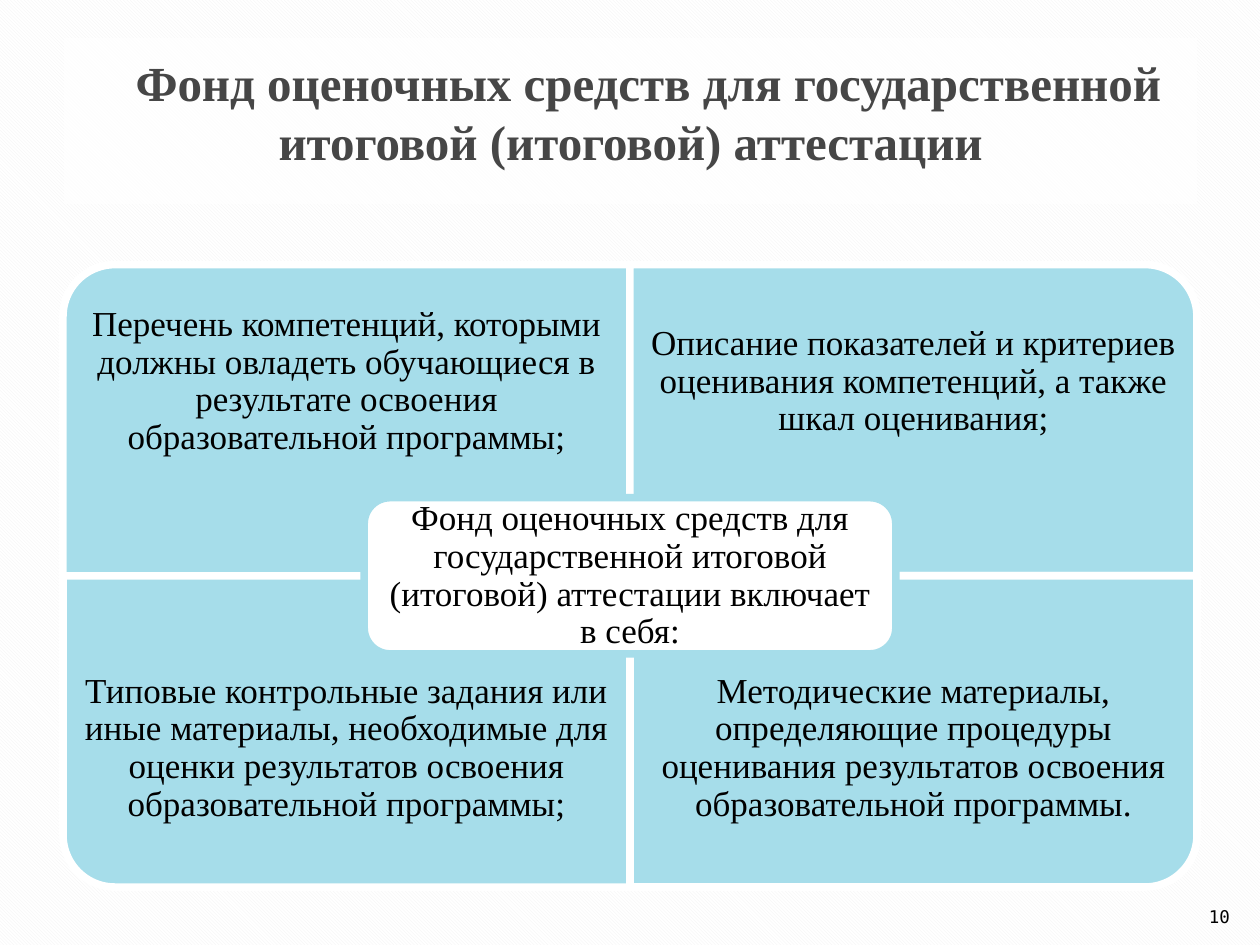
"""Build a slide on the assessment fund: four quadrants around a central label."""
import pptx
import pptx.dml.color
import pptx.enum.dml
import pptx.enum.shapes
import pptx.enum.text
import pptx.oxml
import pptx.oxml.ns
import pptx.util

Inches, Pt = pptx.util.Inches, pptx.util.Pt
RGBColor = pptx.dml.color.RGBColor
SHAPE = pptx.enum.shapes.MSO_SHAPE
ANCHOR = pptx.enum.text.MSO_ANCHOR
ALIGN = pptx.enum.text.PP_ALIGN

TITLE = "Фонд оценочных средств для государственной итоговой (итоговой) аттестации"
CENTER = "Фонд оценочных средств для государственной итоговой (итоговой) аттестации включает в себя:"
QUADRANTS = [
    ("Перечень компетенций, которыми должны овладеть обучающиеся в результате "
     "освоения образовательной программы;", 270),
    ("Описание показателей и критериев оценивания компетенций, а также шкал оценивания;", 0),
    ("Типовые контрольные задания или иные материалы, необходимые для оценки "
     "результатов освоения образовательной программы;", 180),
    ("Методические материалы, определяющие процедуры оценивания результатов "
     "освоения образовательной программы.", 90),
]
PAGE = "10"

WHITE = RGBColor(0xFF, 0xFF, 0xFF)
BLACK = RGBColor(0, 0, 0)
GRAY = RGBColor(0x46, 0x46, 0x46)
PALE = RGBColor(0xF2, 0xF2, 0xF2)
BLUE = RGBColor(0xA6, 0xDD, 0xEA)

LEFT, TOP, QUAD_W, QUAD_H = 0.5, 2.1, 4.5, 2.47
TEXT_H = 1.86
TITLE_FONT = {"name": "Times New Roman", "size": Pt(28), "bold": True}
BODY_FONT = {"name": "Times New Roman", "size": Pt(20)}
PAGE_FONT = {"name": "DejaVu Sans Mono", "size": Pt(10)}


def write(s, text, font, color=BLACK, anchor=ANCHOR.MIDDLE, align=ALIGN.CENTER,
          spacing=None, margin=None):
    tf = s.text_frame
    tf.word_wrap = True
    tf.vertical_anchor = anchor
    if margin is not None:
        for side in ("left", "top", "right", "bottom"):
            setattr(tf, f"margin_{side}", Inches(margin))
    p = tf.paragraphs[0]
    p.alignment = align
    p.line_spacing = spacing
    r = p.add_run()
    r.text = text
    for key, value in font.items():
        setattr(r.font, key, value)
    r.font.color.rgb = color
    return p


def add_block(sp, kind, x, y, w, h, fill, line):
    s = sp.add_shape(kind, Inches(x), Inches(y), Inches(w), Inches(h))
    s.shadow.inherit = False
    s.fill.solid()
    s.fill.fore_color.rgb = fill
    s.line.color.rgb = line
    s.line.width = Pt(4.33)
    return s


def add_title(s):
    s.left, s.top, s.width, s.height = map(Inches, (0.51, 0.3, 8.99, 1.32))
    s.fill.solid()
    s.fill.fore_color.rgb = WHITE
    color = s.fill._xPr.find(".//" + pptx.oxml.ns.qn("a:srgbClr"))
    color.append(pptx.oxml.parse_xml(
        f'<a:alpha {pptx.oxml.ns.nsdecls("a")} val="72000"/>'))
    p = write(s, TITLE, TITLE_FONT, GRAY, ANCHOR.TOP)
    s.text_frame.margin_top = Inches(0.12)
    p._p.get_or_add_pPr().set("indent", str(Inches(0.28)))


def add_quadrant(sp, index, text, angle):
    row, col = divmod(index, 2)
    x, y = LEFT + col * QUAD_W, TOP + row * QUAD_H
    w, h = (QUAD_H, QUAD_W) if angle % 180 else (QUAD_W, QUAD_H)
    s = add_block(sp, SHAPE.ROUND_1_RECTANGLE, x + (QUAD_W - w) / 2,
                  y + (QUAD_H - h) / 2, w, h, BLUE, WHITE)
    s.rotation = angle
    text_y = y + row * (QUAD_H - TEXT_H)
    box = sp.add_textbox(Inches(x), Inches(text_y), Inches(QUAD_W), Inches(TEXT_H))
    write(box, text, BODY_FONT, anchor=ANCHOR.TOP if row else ANCHOR.MIDDLE,
          spacing=0.9, margin=0.16)


def main():
    prs = pptx.Presentation()
    prs.slide_width, prs.slide_height = Inches(10), Inches(7.5)
    slide = prs.slides.add_slide(prs.slide_layouts[5])
    sp = slide.shapes
    bg = slide.background.fill
    bg.patterned()
    bg.pattern = pptx.enum.dml.MSO_PATTERN.LIGHT_DOWNWARD_DIAGONAL
    bg.fore_color.rgb = PALE
    bg.back_color.rgb = WHITE

    add_title(sp.title)
    for index, (text, angle) in enumerate(QUADRANTS):
        add_quadrant(sp, index, text, angle)

    w, h = 4.22, 1.24
    s = add_block(sp, SHAPE.ROUNDED_RECTANGLE, LEFT + QUAD_W - w / 2,
                  TOP + QUAD_H - h / 2, w, h, WHITE, BLUE)
    write(s, CENTER, BODY_FONT, spacing=0.9, margin=0.08)

    box = sp.add_textbox(Inches(9.46), Inches(7.01), Inches(0.4), Inches(0.4))
    write(box, PAGE, PAGE_FONT, anchor=ANCHOR.BOTTOM, align=ALIGN.RIGHT)
    prs.save("out.pptx")


if __name__ == "__main__":
    main()
